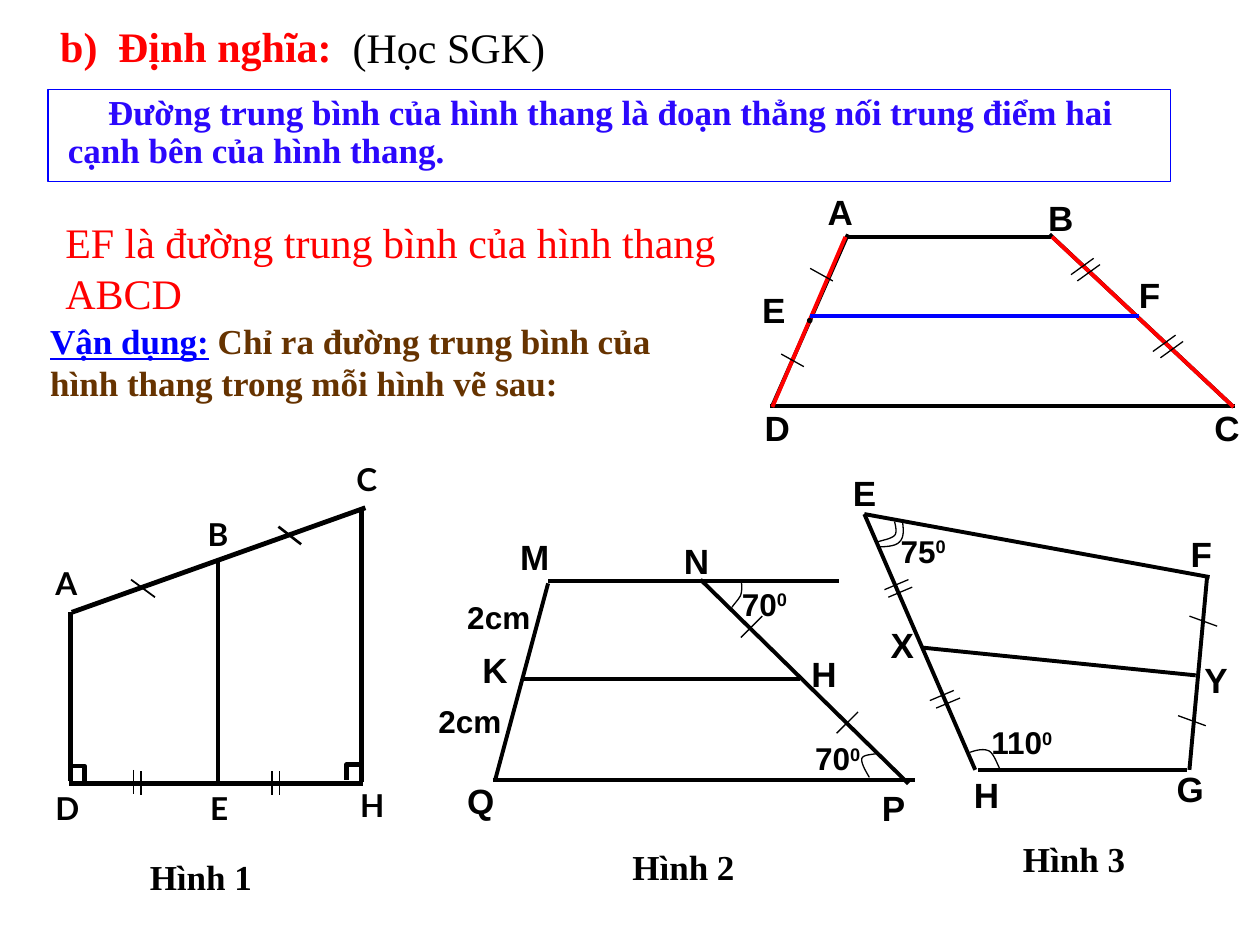
from dataclasses import dataclass

from lxml.etree import SubElement
from pptx import Presentation
from pptx.dml.color import RGBColor
from pptx.enum.shapes import MSO_CONNECTOR, MSO_SHAPE
from pptx.oxml.ns import qn
from pptx.util import Pt

SCALE = 9144


@dataclass(frozen=True)
class Theme:
    """Colours, fonts, type sizes and line widths of the slide."""
    black: str = "000000"
    red: str = "FF0000"
    blue: str = "0000FF"
    violet: str = "2B08FC"
    brown: str = "663300"
    serif: str = "Times New Roman"
    sans: str = "Arial"
    rounded: str = "Lato"
    dot: str = "Roboto"
    heading: int = 24
    body: int = 20
    small: int = 18
    hairline: float = 0.75
    edge: float = 2.25
    heavy: float = 2.75


THEME = Theme()


def emu(pixels):
    """Turn px into EMU."""
    return round(pixels * SCALE)


def paint(line, color, width):
    """Give a line its colour and width."""
    line.color.rgb = RGBColor.from_string(color)
    line.width = Pt(width)


def write(page, box, text, size, font=THEME.serif, color=THEME.black, bold=True, tab=None):
    """Place one wrapped paragraph in a box and return the paragraph."""
    frame = page.shapes.add_textbox(*map(emu, box)).text_frame
    frame.word_wrap = True
    para = frame.paragraphs[0]
    para.font.size, para.font.name, para.font.bold = Pt(size), font, bold
    para.font.color.rgb = RGBColor.from_string(color)
    if tab:
        stops = SubElement(para._p.get_or_add_pPr(), qn("a:tabLst"))
        para._p.pPr.insert(0, stops)
        SubElement(stops, qn("a:tab"), pos=str(emu(tab)), algn="l")
    para.add_run().text = text
    return para


class Figure:
    """A drawing whose parts are placed relative to its top left corner."""

    def __init__(self, page, left, top):
        """Remember the page and the corner."""
        self.page, self.left, self.top = page, left, top

    def lines(self, segments, width=THEME.edge, color=THEME.black):
        """Draw straight segments given as x1, y1, x2, y2."""
        for x1, y1, x2, y2 in segments:
            line = self.page.shapes.add_connector(
                MSO_CONNECTOR.STRAIGHT,
                emu(self.left + x1), emu(self.top + y1),
                emu(self.left + x2), emu(self.top + y2))
            paint(line.line, color, width)
            SubElement(line._element.spPr, qn("a:effectLst"))

    def ticks(self, starts, reach, width=THEME.hairline):
        """Draw equal parallel marks from each start."""
        self.lines([(x, y, x + reach[0], y + reach[1]) for x, y in starts], width)

    def outline(self, points, width):
        """Draw an open, unfilled outline through the points."""
        spots = [(emu(self.left + x), emu(self.top + y)) for x, y in points]
        builder = self.page.shapes.build_freeform(*spots[0])
        builder.add_line_segments(spots[1:], close=False)
        shape = builder.convert_to_shape()
        shape.shadow.inherit = False
        shape.fill.background()
        paint(shape.line, THEME.black, width)

    def arc(self, controls, steps=8):
        """Draw an angle mark along a chain of cubic curves."""
        points = [controls[0]]
        for first in range(0, len(controls) - 1, 3):
            curve = controls[first:first + 4]
            for step in range(1, steps + 1):
                t = step / steps
                weights = ((1 - t) ** 3, 3 * t * (1 - t) ** 2, 3 * t * t * (1 - t), t ** 3)
                points.append(tuple(sum(w * p[axis] for w, p in zip(weights, curve))
                                    for axis in (0, 1)))
        self.outline(points, THEME.hairline)

    def label(self, text, x, y, width, size=THEME.body, font=THEME.sans, tab=None):
        """Write one label and return its paragraph."""
        height = 43 if size == THEME.body else 40
        return write(self.page, (self.left + x, self.top + y, width, height),
                     text, size, font, tab=tab)

    def labels(self, names, width, **style):
        """Write several labels of equal width."""
        for text, x, y in names:
            self.label(text, x, y, width, **style)

    def angle(self, degrees, x, y):
        """Write an angle with a raised zero."""
        span = self.label(degrees, x, y, 75, THEME.small).add_run()
        span.text = "0"
        span._r.get_or_add_rPr().set("baseline", "30000")

    def caption(self, text, x, y):
        """Write the caption of the figure."""
        self.label(text, x, y, 128, font=THEME.serif)


def draw_heading(page, left, top):
    """Draw the heading, the framed definition and the two statements."""
    write(page, (left, top + 4, 250, 46), "b)\tĐịnh nghĩa:", THEME.heading,
          color=THEME.red, tab=46).line_spacing = 0.9
    write(page, (left + 232, top, 269, 50), "(Học SGK)", THEME.heading, bold=False)
    para = write(page, (left + 6, top + 59, 900, 73),
                 "Đường trung bình của hình thang là đoạn thẳng nối trung điểm hai "
                 "cạnh bên của hình thang.", THEME.body, color=THEME.violet)
    para.line_spacing = 0.9
    para._p.pPr.set("indent", str(emu(32)))
    frame = page.shapes.add_shape(MSO_SHAPE.RECTANGLE,
                                  *map(emu, (left, top + 59, 891, 73)))
    frame.shadow.inherit = False
    frame.fill.background()
    paint(frame.line, THEME.blue, THEME.hairline)
    write(page, (left + 4, top + 155, 546, 91),
          "EF là đường trung bình của hình thang ABCD",
          THEME.heading, color=THEME.red, bold=False)
    para = write(page, (left - 8, top + 237, 524, 77), "Vận dụng:",
                 THEME.body, color=THEME.brown)
    para.runs[0].font.underline = True
    para.runs[0].font.color.rgb = RGBColor.from_string(THEME.blue)
    para.add_run().text = " Chỉ ra đường trung bình của hình thang trong mỗi hình vẽ sau:"


def draw_example(page, left, top):
    """Draw trapezoid ABCD with its midline EF."""
    figure = Figure(page, left, top)
    figure.lines([(83, 48, 245, 48), (21, 182, 390, 182),
                  (83, 46, 23, 182), (243, 46, 389, 183)])
    figure.labels([("A", 57, 6), ("B", 232, 11), ("D", 7, 178), ("C", 364, 178)], 52)
    figure.lines([(81, 48, 23, 183), (245, 48, 389, 183)], color=THEME.red)
    span = figure.label("E\t", 5, 84, 82, tab=34).add_run()
    span.text, span.font.name = ".", THEME.dot
    figure.lines([(53, 111, 314, 111)], color=THEME.blue)
    figure.label("F", 304, 72, 44)
    figure.ticks([(53, 73), (30, 141)], (18, 10))
    figure.ticks([(278, 65), (283, 70), (349, 131), (343, 126)], (-18, 13))


def draw_figure_one(page, left, top):
    """Draw the right trapezoid ACHD with midline BE."""
    figure = Figure(page, left, top)
    figure.lines([(25, 262, 258, 262), (143, 85, 143, 260), (26, 260, 26, 126),
                  (257, 261, 257, 45), (27, 126, 260, 43)], THEME.heavy)
    figure.ticks([(191, 58)], (18, 14), 1.5)
    figure.ticks([(74, 100)], (19, 14), 1)
    figure.ticks([(76, 251), (82, 252), (186, 252), (192, 252)], (0, 19))
    figure.outline([(25, 248), (37, 248), (37, 260)], THEME.heavy)
    figure.outline([(245, 259), (245, 247), (257, 247)], THEME.heavy)
    figure.labels([("A", 4, 83), ("B", 125, 44), ("C", 243, 0), ("H", 246, 259),
                   ("E", 127, 261), ("D", 4, 261)], 38, size=THEME.small, font=THEME.rounded)
    figure.caption("Hình 1", 79, 314)


def draw_figure_two(page, left, top):
    """Draw trapezoid MNPQ with midline KH."""
    figure = Figure(page, left, top)
    figure.lines([(105, 41, 336, 41), (105, 43, 63, 199), (61, 199, 396, 199),
                  (226, 40, 391, 202), (85, 119, 305, 119)])
    figure.arc([(258, 40), (259, 44), (259, 48), (258, 52), (257, 55), (252, 60), (251, 62)])
    figure.arc([(367, 178), (361, 179), (355, 179), (354, 182),
                (353, 186), (359, 195), (360, 197)])
    figure.labels([("M", 73, 0), ("N", 203, 3), ("P", 360, 199), ("Q", 31, 194),
                   ("K", 43, 90), ("H", 304, 93)], 62)
    figure.ticks([(275, 69), (351, 145)], (-17, 17))
    figure.labels([("2cm", 31, 50), ("2cm", 8, 132)], 88, size=THEME.small)
    figure.angle("70", 249, 39)
    figure.angle("70", 307, 162)
    figure.caption("Hình 2", 162, 246)


def draw_figure_three(page, left, top):
    """Draw quadrilateral EFGH with segment XY."""
    figure = Figure(page, left, top)
    figure.lines([(116, 251, 282, 251), (114, 251, 26, 48), (284, 251, 298, 98),
                  (26, 48, 300, 98), (72, 154, 289, 176)])
    figure.labels([("E", 7, 9), ("F", 275, 58), ("G", 264, 244), ("H", 103, 249),
                   ("X", 37, 130), ("Y", 286, 158)], 72)
    figure.ticks([(61, 100), (64, 106), (97, 188), (102, 194)], (-19, 8))
    figure.ticks([(284, 129), (275, 208)], (22, 8))
    figure.arc([(110, 237), (116, 235), (121, 234), (125, 236),
                (129, 238), (132, 248), (134, 251)])
    figure.arc([(50, 54), (51, 58), (52, 63), (50, 65), (47, 68), (39, 69), (37, 70)])
    figure.arc([(56, 52), (57, 59), (58, 66), (54, 70), (51, 74), (40, 74), (37, 74)])
    figure.angle("75", 45, 57)
    figure.angle("110", 117, 209)
    figure.caption("Hình 3", 142, 300)


def main():
    """Build the slide and save it."""
    deck = Presentation()
    deck.slide_width, deck.slide_height = emu(1000), emu(750)
    page = deck.slides.add_slide(deck.slide_layouts[6])
    draw_heading(page, 38, 12)
    draw_example(page, 590, 140)
    draw_figure_one(page, 30, 360)
    draw_figure_two(page, 330, 420)
    draw_figure_three(page, 660, 360)
    deck.save("out.pptx")


if __name__ == "__main__":
    main()
